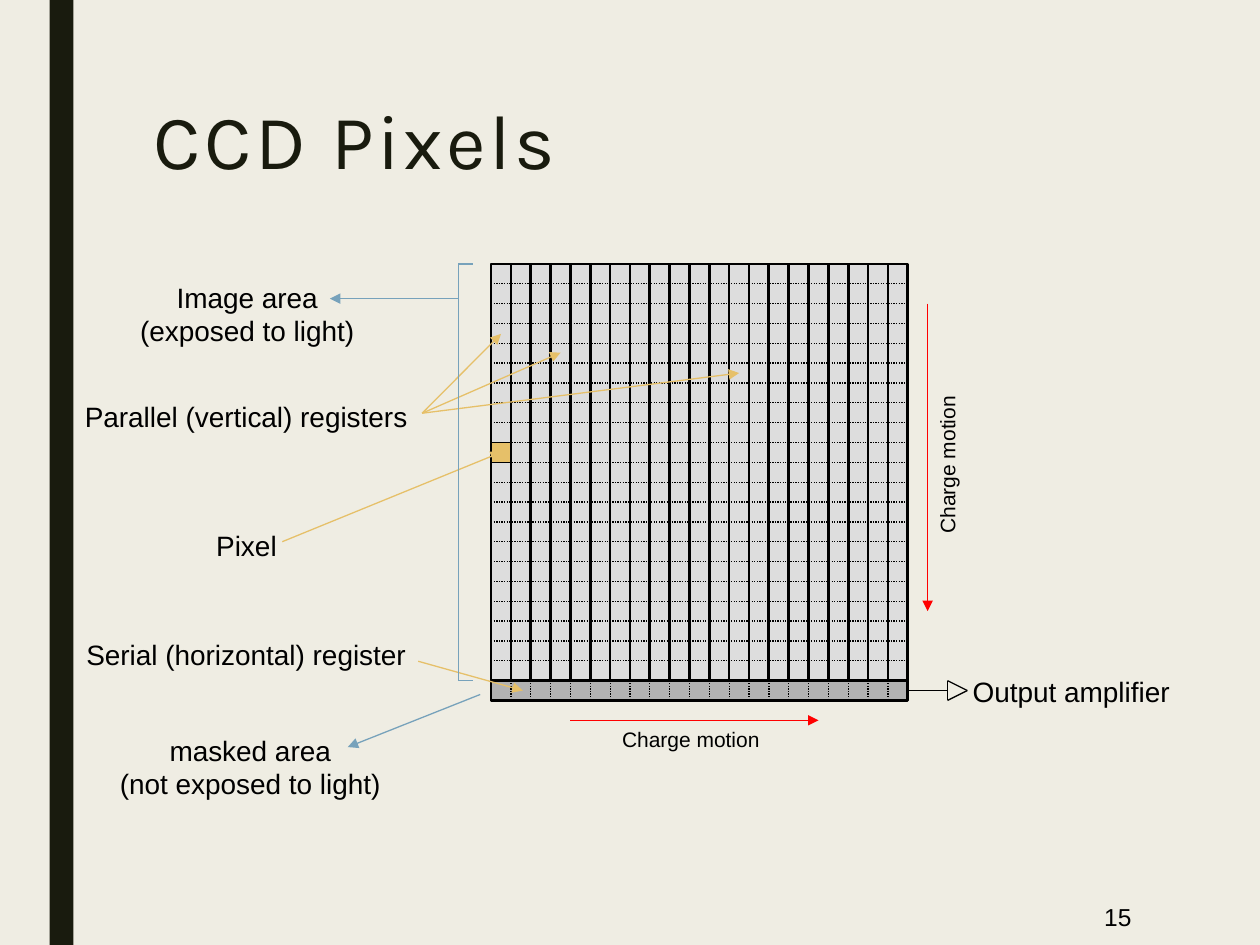
from itertools import pairwise

from pptx import Presentation
from pptx.dml.color import RGBColor as RGB
from pptx.enum.dml import MSO_LINE as Dash
from pptx.enum.shapes import MSO_CONNECTOR as Link, MSO_SHAPE as Form
from pptx.enum.text import MSO_ANCHOR as Anchor, PP_ALIGN as Align
from pptx.oxml.ns import qn
from pptx.util import Cm, Pt
from lxml.etree import SubElement

PAPER = RGB(0xEF, 0xED, 0xE3)
DARK = RGB(0x19, 0x1B, 0x0E)
BLACK = RGB(0, 0, 0)
LIGHT = RGB(0xDD, 0xDD, 0xDD)
GRAY = RGB(0xB2, 0xB2, 0xB2)
GOLD = RGB(0xE6, 0xC0, 0x69)
BLUE = RGB(0x77, 0xA2, 0xBB)
RED = RGB(0xFF, 0, 0)

# Pixel grid, in cm
COUNT, STEP = 21, 0.4
LEFT, TOP = 9.9, 5.32
SIDE = COUNT * STEP
RIGHT, BASE = LEFT + SIDE, TOP + SIDE
MID = BASE + STEP / 2


class Board:
    """Holds the text style and the current slide; lengths are in cm."""

    font = "Arial"

    def __init__(self, deck):
        self.slide = deck.slides.add_slide(deck.slide_layouts[5])
        self.shapes = self.slide.shapes
        fill = self.slide.background.fill
        fill.solid()
        fill.fore_color.rgb = PAPER

    def style(self, para, size, color, font, align):
        para.alignment = align
        for run in para.runs:
            run.font.size = Pt(size)
            run.font.name = font
            run.font.color.rgb = color

    def title(self, text, x, y, w, h):
        box = self.shapes.title
        box.left, box.top, box.width, box.height = Cm(x), Cm(y), Cm(w), Cm(h)
        frame = box.text_frame
        frame.text = text
        frame.vertical_anchor = Anchor.MIDDLE
        para = frame.paragraphs[0]
        para.line_spacing = 0.89
        self.style(para, 44, DARK, "Karla", Align.LEFT)
        para.runs[0].font._element.set("spc", "200")

    def label(self, text, x, y, w, h, size=16, align=Align.LEFT, turn=0):
        box = self.shapes.add_textbox(Cm(x), Cm(y), Cm(w), Cm(h))
        box.rotation = turn
        frame = box.text_frame
        frame.word_wrap = False
        frame.vertical_anchor = Anchor.MIDDLE
        frame.text = text
        for para in frame.paragraphs:
            self.style(para, size, BLACK, self.font, align)

    def rect(self, x, y, w, h, fill, width=0):
        box = self.shapes.add_shape(Form.RECTANGLE, Cm(x), Cm(y), Cm(w), Cm(h))
        box.shadow.inherit = False
        box.fill.solid()
        box.fill.fore_color.rgb = fill
        if width:
            box.line.color.rgb = BLACK
            box.line.width = Pt(width)
        else:
            box.line.fill.background()
        return box

    def line(self, start, end, color=BLACK, dash=None, head=False):
        link = self.shapes.add_connector(
            Link.STRAIGHT, *(Cm(v) for v in (*start, *end)))
        link.line.color.rgb = color
        link.line.width = Pt(0.75)
        if dash:
            link.line.dash_style = dash
        if head:
            SubElement(link.line._get_or_add_ln(), qn("a:tailEnd"), type="triangle")
        SubElement(link._element.spPr, qn("a:effectLst"))
        return link

    def arrow(self, start, end, color):
        return self.line(start, end, color, head=True)

    def chain(self, points, color=BLACK):
        for start, end in pairwise(points):
            self.line(start, end, color)


def main():
    deck = Presentation()
    deck.slide_width, deck.slide_height = Cm(25.4), Cm(19.05)
    board = Board(deck)

    # Side bar, title and page number
    board.rect(1, 0, 0.48, 19.05, DARK)
    board.title("CCD Pixels", 2.85, 1.9, 20, 2.03)
    board.label("15", 19.74, 17.93, 3.32, 1.12, 14, Align.RIGHT)

    # Registers with their dotted pixel borders
    serial = board.rect(LEFT, BASE, SIDE, STEP, GRAY, 1.5)
    for i in range(COUNT):
        board.rect(LEFT + i * STEP, TOP, STEP, SIDE, LIGHT, 1.5)
    for i in range(1, COUNT):
        x, y = LEFT + i * STEP, TOP + i * STEP
        board.line((LEFT, y), (RIGHT, y), dash=Dash.ROUND_DOT)
        board.line((x, BASE), (x, BASE + STEP), dash=Dash.ROUND_DOT)

    # Charge motion
    board.arrow((18.7, 6.12), (18.7, 12.32), RED)
    board.arrow((11.5, 14.52), (16.5, 14.52), RED)
    board.label("Charge motion", 12.29, 14.53, 3.28, 0.76, 12)
    board.label("Charge motion", 17.45, 8.99, 3.28, 0.76, 12, turn=270)

    # Output amplifier
    wire = board.line((RIGHT, MID), (19.1, MID))
    wire.begin_connect(serial, 3)
    tip, low, high = (19.5, MID), (19.1, MID + 0.2), (19.1, MID - 0.2)
    board.chain([high, low, tip, high])
    board.label("Output amplifier", 19.36, 13.46, 4.5, 0.94)

    # Names on the left
    board.label("Serial (horizontal) register", 1.49, 12.73, 6.96, 0.94)
    board.label("Parallel (vertical) registers", 1.46, 7.93, 7.04, 0.94)
    board.label("Pixel", 4.11, 10.52, 1.73, 0.94)
    board.label("Image area\n(exposed to light)", 2.56, 5.52, 4.85, 1.62,
                align=Align.CENTER)
    board.label("masked area\n(not exposed to light)", 2.15, 14.65, 5.79, 1.62,
                align=Align.CENTER)

    # Pointers to registers and pixel
    for end in ((10.1, 6.73), (11.3, 7.11), (14.9, 7.52)):
        board.arrow((8.51, 8.33), end, GOLD)
    board.rect(LEFT, TOP + 9 * STEP, STEP, STEP, GOLD, 0.75)
    board.arrow((5.69, 10.92), (10.1, 9.12), GOLD)
    board.arrow((8.43, 13.33), (10.54, 13.92), GOLD)

    # Image area bracket and masked area
    board.chain([(9.53, BASE), (9.24, BASE), (9.24, TOP), (9.53, TOP)], BLUE)
    board.arrow((9.23, 6.02), (6.65, 6.02), BLUE)
    board.arrow((9.68, 14), (7.01, 15.06), BLUE)

    deck.save("out.pptx")


if __name__ == "__main__":
    main()
